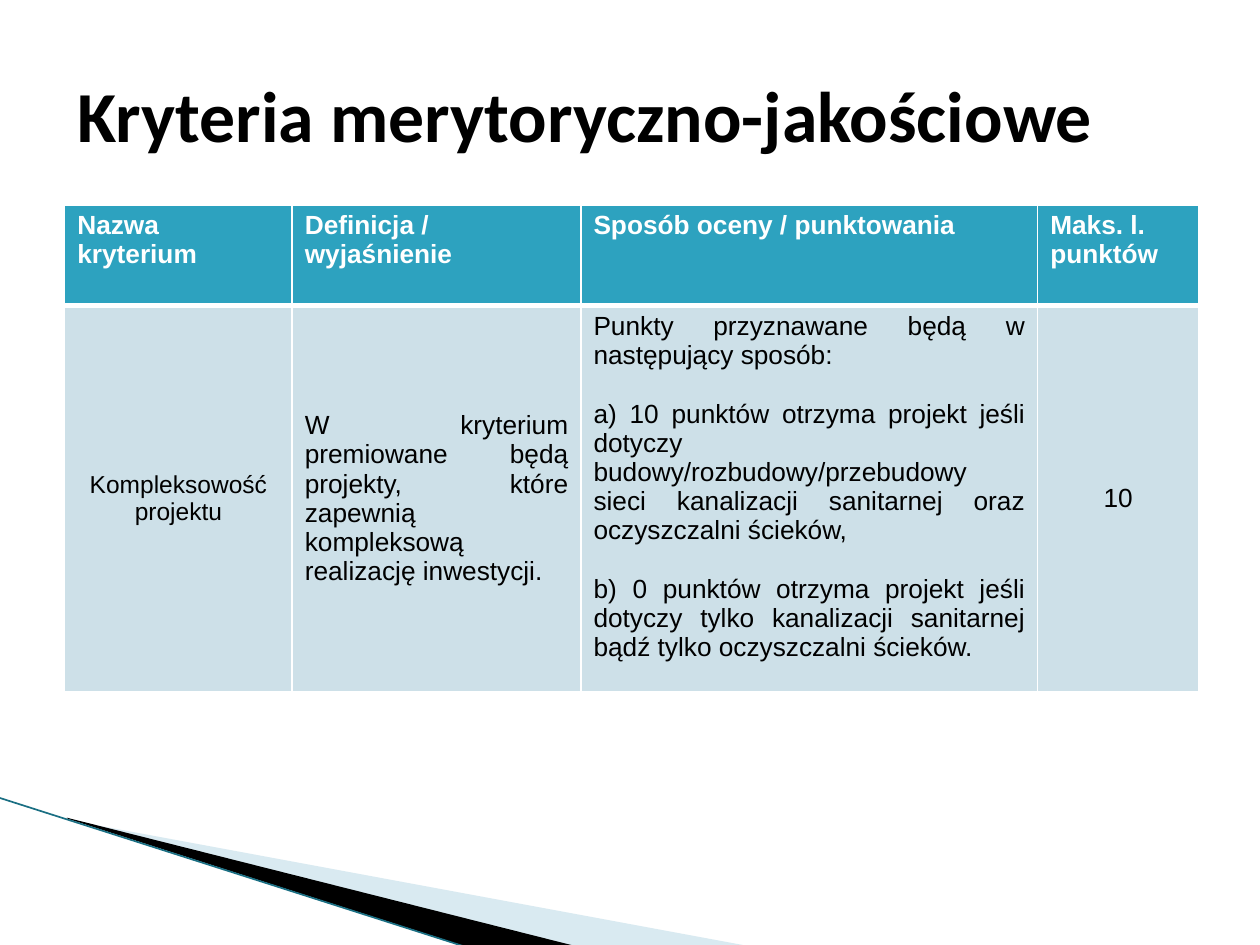
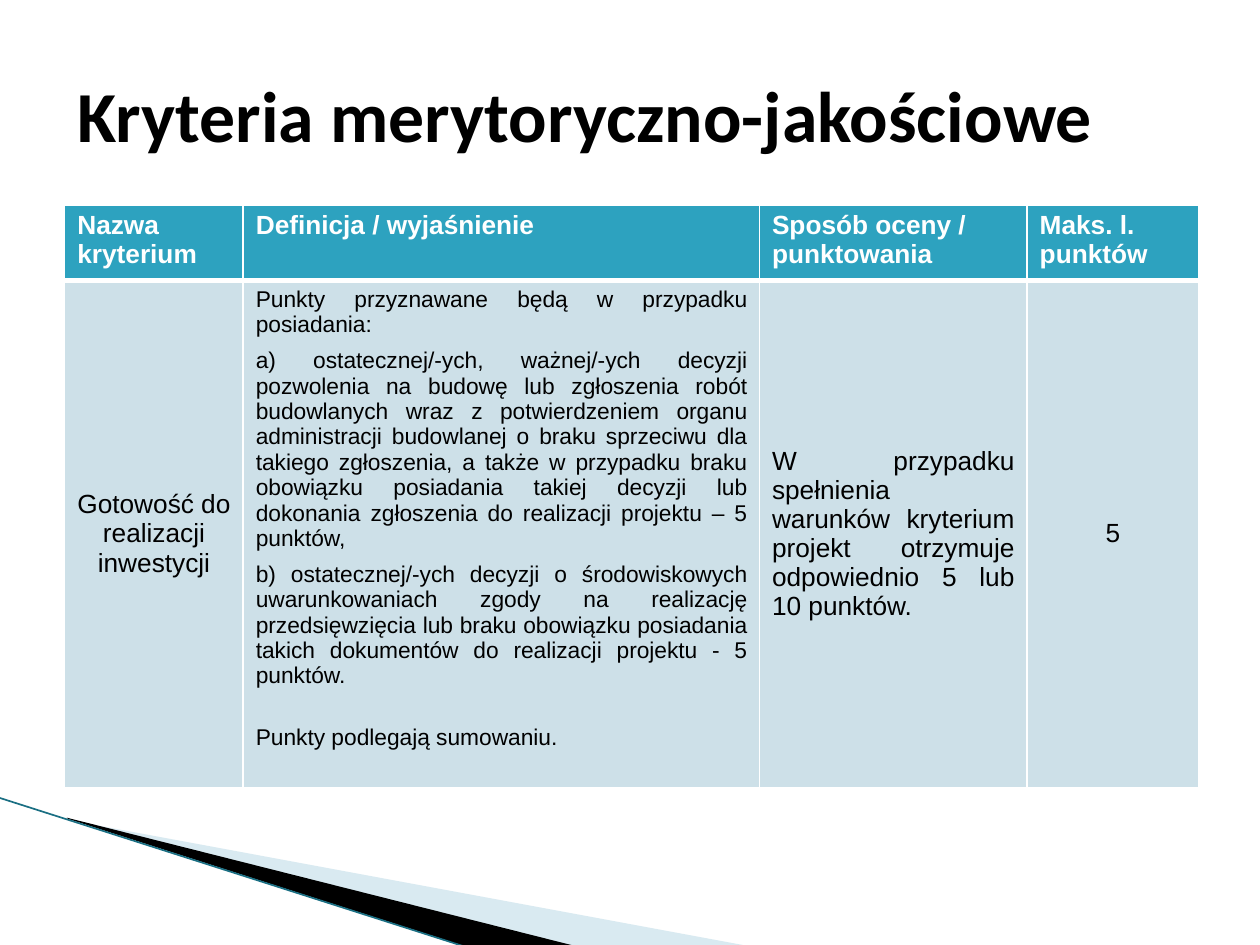
from lxml.etree import SubElement
from pptx import Presentation
from pptx.dml.color import RGBColor
from pptx.enum.shapes import MSO_CONNECTOR
from pptx.enum.text import MSO_ANCHOR, PP_ALIGN
from pptx.oxml import parse_xml
from pptx.oxml.ns import nsdecls, qn
from pptx.util import Pt

COLORS = {
    "text": "000000",
    "white": "FFFFFF",
    "header": "2DA2BF",
    "body": "CDE0E8",
    "pale": "A0CBDC",
    "edge": "1A6F83",
}
LEFT, WIDTH = 37, 648
HEADERS = [
    "Nazwa kryterium",
    "Definicja / wyjaśnienie",
    "Sposób oceny / punktowania",
    "Maks. l. punktów",
]
PALE_WEDGE = [(39.6, 468.7), (428.4, 540.7), (328.3, 540.7), (39.6, 468)]
DARK_WEDGE = [(38.2, 467.3), (329, 540.7), (267.8, 541.4), (38.9, 468)]


def rgb(name):
    return RGBColor.from_string(COLORS[name])


class Deck:
    def __init__(self):
        self.prs = Presentation()
        self.prs.slide_width, self.prs.slide_height = Pt(720), Pt(540)
        self.s = None

    def slide(self, title):
        self.s = self.prs.slides.add_slide(self.prs.slide_layouts[6])
        self.wedge(PALE_WEDGE, "pale", 40)
        self.wedge(DARK_WEDGE, "text")
        self.line((-0.7, 455.8), (267.1, 541.4))
        self.title(title)

    def wedge(self, points, color, alpha=100):
        builder = self.s.shapes.build_freeform(*map(Pt, points[0]), scale=1.0)
        builder.add_line_segments([(Pt(x), Pt(y)) for x, y in points[1:]])
        sp = builder.convert_to_shape()
        sp.shadow.inherit = False
        sp.line.fill.background()
        sp.fill.solid()
        sp.fill.fore_color.rgb = rgb(color)
        if alpha < 100:
            clr = next(sp.fill._xPr.iter(qn("a:srgbClr")))
            SubElement(clr, qn("a:alpha"), val=str(alpha * 1000))

    def line(self, start, end):
        ln = self.s.shapes.add_connector(
            MSO_CONNECTOR.STRAIGHT, *map(Pt, start + end))
        ln.line.color.rgb = rgb("edge")
        ln.line.width = Pt(0.95)
        SubElement(ln._element.spPr, qn("a:effectLst"))

    def run(self, p, text, size, color="text", bold=False, font="Arial"):
        r = p.add_run()
        r.text = text
        r.font.name, r.font.size, r.font.bold = font, Pt(size), bold
        r.font.color.rgb = rgb(color)

    def title(self, text):
        tf = self.s.shapes.add_textbox(
            Pt(LEFT), Pt(20), Pt(WIDTH), Pt(90)).text_frame
        tf.word_wrap = True
        tf.vertical_anchor = MSO_ANCHOR.MIDDLE
        self.run(tf.paragraphs[0], text, 41, bold=True, font="Calibri")

    def borders(self, cell, top, bottom):
        tc_pr = cell._tc.get_or_add_tcPr()
        sides = {"L": 1, "R": 1, "T": top, "B": bottom}
        for i, (side, width) in enumerate(sides.items()):
            tc_pr.insert(i, parse_xml(
                f'<a:ln{side} {nsdecls("a")} w="{Pt(width)}"><a:solidFill>'
                f'<a:srgbClr val="{COLORS["white"]}"/></a:solidFill></a:ln{side}>'))

    def fill(self, cell, color):
        cell.fill.solid()
        cell.fill.fore_color.rgb = rgb(color)

    def table(self, widths, heights, body):
        table = self.s.shapes.add_table(
            2, len(widths), Pt(LEFT), Pt(117), Pt(WIDTH), Pt(sum(heights))).table
        for row, height in zip(table.rows, heights):
            row.height = Pt(height)
        for i, (width, header, content) in enumerate(zip(widths, HEADERS, body)):
            table.columns[i].width = Pt(width)
            head, cell = table.cell(0, i), table.cell(1, i)
            self.fill(head, "header")
            self.borders(head, 1, 3)
            self.run(head.text_frame.paragraphs[0], header, 15, "white", True)
            self.fill(cell, "body")
            self.borders(cell, 3, 1)
            self.body_text(cell, **content)

    def body_text(self, cell, paragraphs, size=15, align=PP_ALIGN.JUSTIFY,
                  anchor=MSO_ANCHOR.MIDDLE, gaps=()):
        cell.vertical_anchor = anchor
        tf = cell.text_frame
        for i, text in enumerate(paragraphs):
            p = tf.add_paragraph() if i else tf.paragraphs[0]
            p.alignment = align
            if i:
                p.space_before = Pt(gaps[i - 1])
            self.run(p, text, size)


def centered(text, size=15):
    return {"paragraphs": [text], "size": size, "align": PP_ALIGN.CENTER}


def main():
    deck = Deck()
    title = "Kryteria merytoryczno-jakościowe"

    deck.slide(title)
    deck.table([130, 165, 261, 92], [57.5, 208.5], [
        centered("Kompleksowość projektu", 14),
        {"paragraphs": [
            "W kryterium premiowane będą projekty, które zapewnią "
            "kompleksową realizację inwestycji."]},
        {"paragraphs": [
            "Punkty przyznawane będą w następujący sposób:",
            "a) 10 punktów otrzyma projekt jeśli dotyczy "
            "budowy/rozbudowy/przebudowy sieci kanalizacji sanitarnej "
            "oraz oczyszczalni ścieków,",
            "b) 0 punktów otrzyma projekt jeśli dotyczy tylko kanalizacji "
            "sanitarnej bądź tylko oczyszczalni ścieków."],
         "anchor": MSO_ANCHOR.TOP, "gaps": [16.75, 16.75]},
        centered("10"),
    ])

    deck.slide(title)
    deck.table([102, 295, 153, 98], [41, 272], [
        centered("Gotowość do realizacji inwestycji"),
        {"paragraphs": [
            "Punkty przyznawane będą w przypadku posiadania:",
            "a) ostatecznej/-ych, ważnej/-ych decyzji pozwolenia na budowę lub "
            "zgłoszenia robót budowlanych wraz z potwierdzeniem organu "
            "administracji budowlanej o braku sprzeciwu dla takiego zgłoszenia, "
            "a także w przypadku braku obowiązku posiadania takiej decyzji lub "
            "dokonania zgłoszenia do realizacji projektu – 5 punktów,",
            "b) ostatecznej/-ych decyzji o środowiskowych uwarunkowaniach zgody "
            "na realizację przedsięwzięcia lub braku obowiązku posiadania takich "
            "dokumentów do realizacji projektu - 5 punktów.",
            "Punkty podlegają sumowaniu."],
         "size": 13, "anchor": MSO_ANCHOR.TOP, "gaps": [6, 6, 20.5]},
        {"paragraphs": [
            "W przypadku spełnienia warunków kryterium projekt otrzymuje "
            "odpowiednio 5 lub 10 punktów."]},
        centered("5"),
    ])

    deck.prs.save("out.pptx")


if __name__ == "__main__":
    main()
